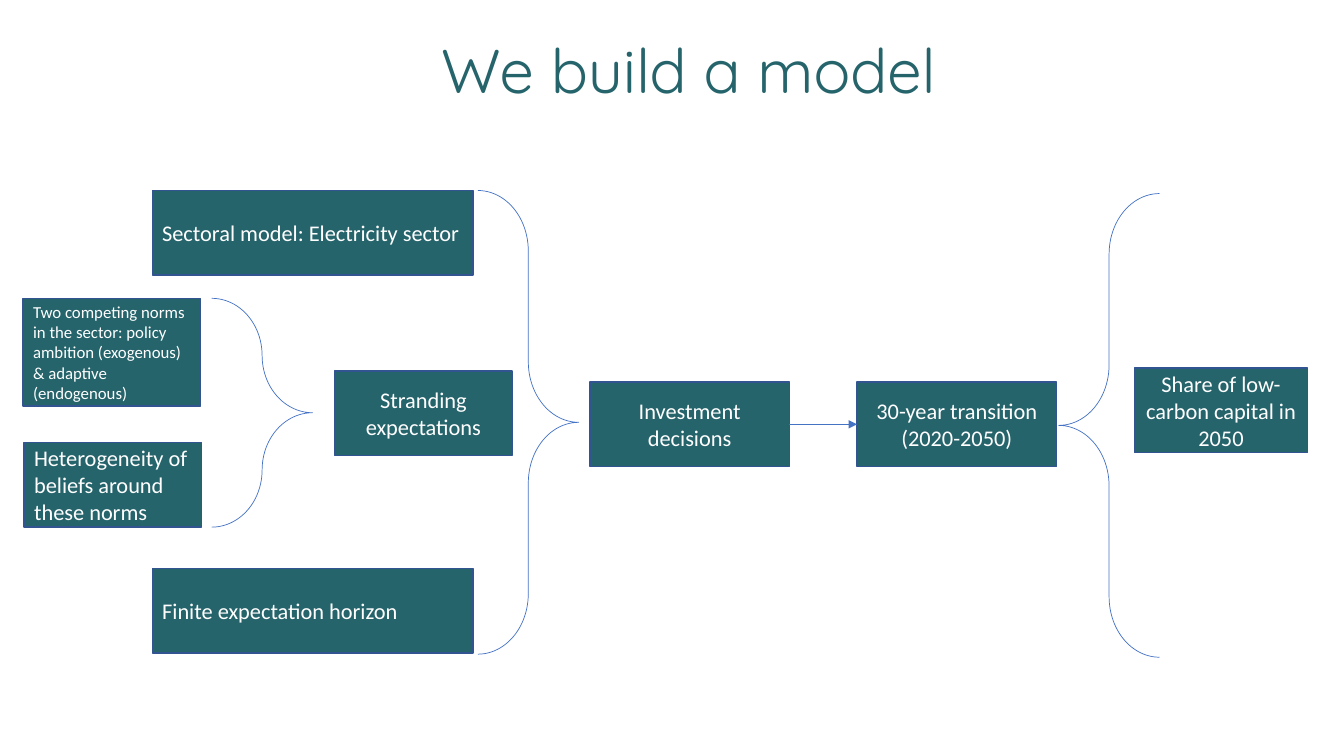
from lxml import etree
from pptx import Presentation
from pptx.dml.color import RGBColor
from pptx.enum.shapes import MSO_CONNECTOR, MSO_SHAPE
from pptx.enum.text import MSO_ANCHOR, PP_ALIGN
from pptx.oxml.ns import qn
from pptx.util import Inches, Pt

LEFT, CENTER = PP_ALIGN.LEFT, PP_ALIGN.CENTER
MIDDLE = MSO_ANCHOR.MIDDLE
RECTANGLE, RIGHT_BRACE = MSO_SHAPE.RECTANGLE, MSO_SHAPE.RIGHT_BRACE
STRAIGHT = MSO_CONNECTOR.STRAIGHT
COLORS = {"teal": "26646C", "border": "325491", "link": "4472C4", "white": "FFFFFF"}
BOX_HEIGHT = 0.84
STEP_TOP, STEP_WIDTH = 3.79, 1.98
INVESTMENT_LEFT, TRANSITION_LEFT = 5.85, 8.5


def color(name):
    return RGBColor.from_string(COLORS[name])


def write(frame, lines, size, font, text_color, align):
    """Fill a text frame with one paragraph per line."""
    frame.word_wrap = True
    for index, line in enumerate(lines):
        paragraph = frame.add_paragraph() if index else frame.paragraphs[0]
        paragraph.alignment = align
        run = paragraph.add_run()
        run.text = line
        run.font.size = Pt(size)
        run.font.name = font
        run.font.color.rgb = color(text_color)


def style_line(line, line_color, width):
    line.color.rgb = color(line_color)
    line.width = Pt(width)


def add_title(slide, text):
    title = slide.shapes.add_textbox(Inches(0.54), Inches(0.27), Inches(12.58), Inches(0.84))
    write(title.text_frame, [text], 44, "Quicksand", "teal", CENTER)


def add_box(slide, left, top, width, lines, align=CENTER, height=BOX_HEIGHT, size=16):
    box = slide.shapes.add_shape(
        RECTANGLE, Inches(left), Inches(top), Inches(width), Inches(height))
    box.shadow.inherit = False
    box.fill.solid()
    box.fill.fore_color.rgb = color("teal")
    style_line(box.line, "border", 1)
    box.text_frame.vertical_anchor = MIDDLE
    write(box.text_frame, lines, size, "Calibri", "white", align)


def add_brace(slide, left, top, height, rotation=0):
    brace = slide.shapes.add_shape(
        RIGHT_BRACE, Inches(left), Inches(top), Inches(1), Inches(height))
    brace.shadow.inherit = False
    brace.fill.background()
    brace.adjustments[0] = 0.601
    brace.rotation = rotation
    style_line(brace.line, "link", 0.5)


def add_arrow(slide, start, end, y):
    arrow = slide.shapes.add_connector(
        STRAIGHT, Inches(start), Inches(y), Inches(end), Inches(y))
    style_line(arrow.line, "link", 0.5)
    properties = arrow.element.spPr
    etree.SubElement(properties.find(qn("a:ln")), qn("a:tailEnd"), type="triangle")
    etree.SubElement(properties, qn("a:effectLst"))


def main():
    """Build the model flow slide."""
    deck = Presentation()
    deck.slide_width, deck.slide_height = Inches(13.33), Inches(7.5)
    slide = deck.slides.add_slide(deck.slide_layouts[6])

    add_title(slide, "We build a model")

    norms = "Two competing norms in the sector: policy ambition (exogenous) & adaptive (endogenous)"
    add_box(slide, 0.23, 2.96, 1.76, [norms], LEFT, height=1.07, size=12)
    add_box(slide, 0.24, 4.39, 1.76, ["Heterogeneity of beliefs around these norms"], LEFT)
    add_brace(slide, 2.1, 2.96, 2.27)

    add_box(slide, 1.51, 1.89, 3.18, ["Sectoral model: Electricity sector"], LEFT)
    add_box(slide, 1.51, 5.64, 3.18, ["Finite expectation horizon"], LEFT)
    add_brace(slide, 4.74, 1.89, 4.6)
    add_box(slide, 3.32, 3.68, 1.76, ["Stranding expectations"])

    add_box(slide, INVESTMENT_LEFT, STEP_TOP, STEP_WIDTH, ["Investment decisions"])
    add_box(slide, TRANSITION_LEFT, STEP_TOP, STEP_WIDTH, ["30-year transition", "(2020-2050)"])
    add_arrow(slide, INVESTMENT_LEFT + STEP_WIDTH, TRANSITION_LEFT, STEP_TOP + BOX_HEIGHT / 2)

    add_brace(slide, 10.5, 1.92, 4.6, rotation=180)
    add_box(slide, 11.25, 3.65, 1.72, ["Share of low-carbon capital in 2050"])

    deck.save("out.pptx")


if __name__ == "__main__":
    main()
